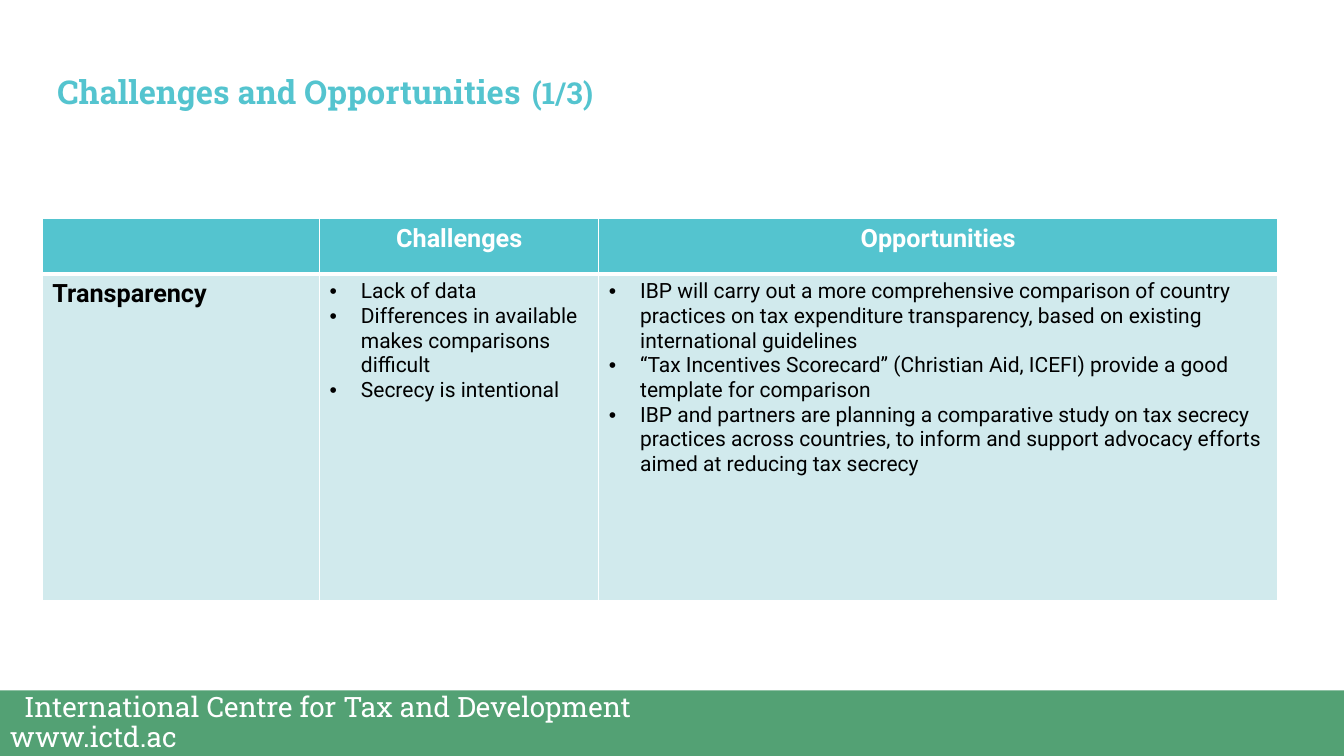
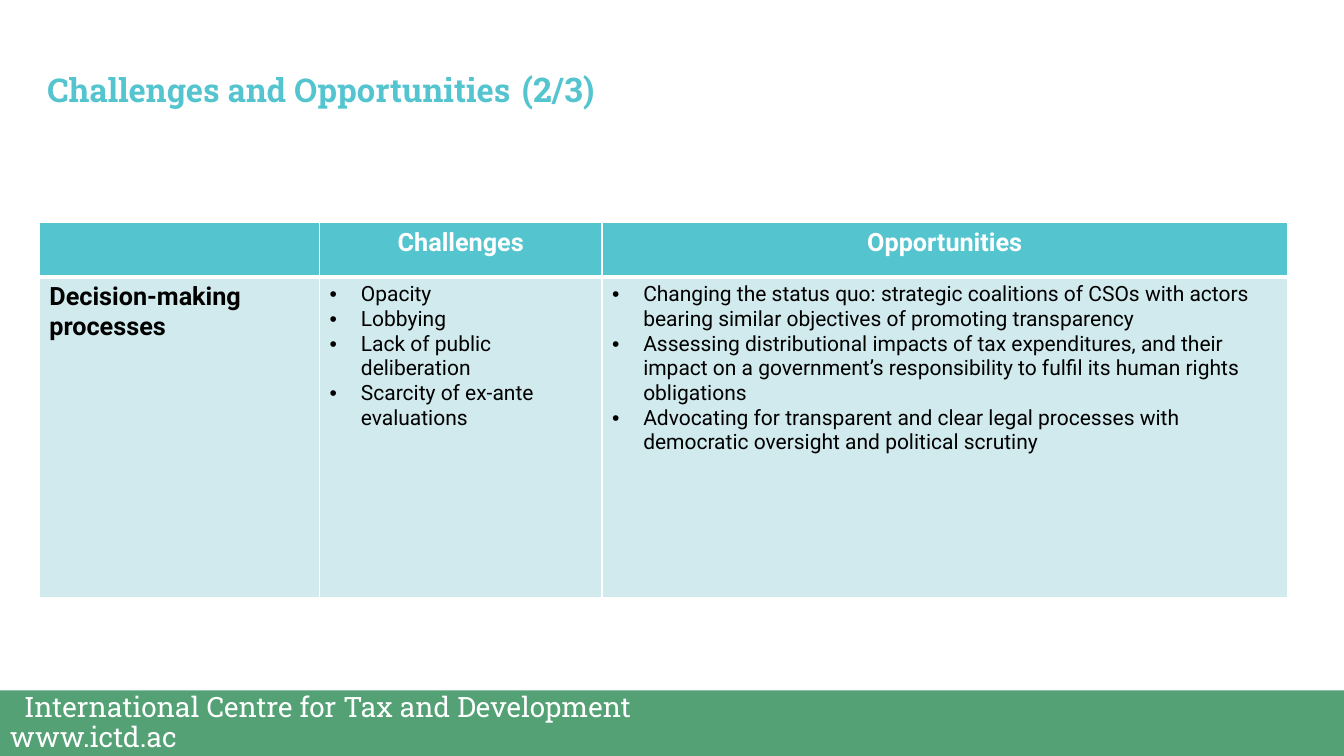
from dataclasses import dataclass

from lxml import etree
from pptx import Presentation
from pptx.dml.color import RGBColor
from pptx.enum.shapes import MSO_SHAPE
from pptx.enum.text import MSO_ANCHOR, MSO_AUTO_SIZE, PP_ALIGN
from pptx.oxml.ns import qn
from pptx.slide import Slide
from pptx.table import _Cell
from pptx.util import Inches, Pt

RECT = MSO_SHAPE.RECTANGLE
TOP, MIDDLE = MSO_ANCHOR.TOP, MSO_ANCHOR.MIDDLE
LEFT, CENTER = PP_ALIGN.LEFT, PP_ALIGN.CENTER
NO_FIT = MSO_AUTO_SIZE.NONE

SLAB, SANS = "Roboto Slab", "Roboto"
TEAL, PALE, GREEN = "54C4CF", "D1EAED", "53A174"
WHITE, BLACK = "FFFFFF", "000000"
WIDTH, HEIGHT, BAND = 13.33, 7.5, 0.65
HANG = 0.31
HEADS = ("", "Challenges", "Opportunities")


@dataclass
class Page:
    title_at: tuple[float, float]
    count: str
    count_size: float
    table_at: tuple[float, float]
    cols: tuple[float, ...]
    rows: tuple[float, ...]
    topic: str
    issues: tuple[str, ...]
    chances: tuple[str, ...]


PAGES = (
    Page(
        (0.47, 0.54), "(1/3)", 21.6,
        (0.42, 2.17), (2.75, 2.77, 6.73), (0.55, 3.24),
        "Transparency",
        (
            "Lack of data",
            "Differences in available makes comparisons difficult",
            "Secrecy is intentional",
        ),
        (
            "IBP will carry out a more comprehensive comparison of country practices on "
            "tax expenditure transparency, based on existing international guidelines",
            "“Tax Incentives Scorecard” (Christian Aid, ICEFI) provide a good template "
            "for comparison",
            "IBP and partners are planning a comparative study on tax secrecy practices "
            "across countries, to inform and support advocacy efforts aimed at reducing "
            "tax secrecy",
        ),
    ),
    Page(
        (0.37, 0.52), "(2/3)", 24.3,
        (0.39, 2.21), (2.78, 2.8, 6.8), (0.54, 3.18),
        "Decision-making processes",
        (
            "Opacity",
            "Lobbying",
            "Lack of public deliberation",
            "Scarcity of ex-ante evaluations",
        ),
        (
            "Changing the status quo: strategic coalitions of CSOs with actors bearing "
            "similar objectives of promoting transparency",
            "Assessing distributional impacts of tax expenditures, and their impact on a "
            "government’s responsibility to fulfil its human rights obligations",
            "Advocating for transparent and clear legal processes with democratic "
            "oversight and political scrutiny",
        ),
    ),
)


def paint(target, color: str) -> None:
    """Give a fill or a font a solid colour."""
    if hasattr(target, "solid"):
        target.solid()
        target.fore_color.rgb = RGBColor.from_string(color)
    else:
        target.color.rgb = RGBColor.from_string(color)


def style(para, face: str, color: str, size: float | None = None, bold: bool = False) -> None:
    font = para.font
    font.name, font.bold = face, bold
    if size:
        font.size = Pt(size)
    paint(font, color)


def add_band(slide: Slide) -> None:
    band = slide.shapes.add_shape(
        RECT, 0, Inches(HEIGHT - BAND), Inches(WIDTH), Inches(BAND))
    band.shadow.inherit = False
    paint(band.fill, GREEN)
    band.line.fill.background()
    frame = band.text_frame
    frame.vertical_anchor = MIDDLE
    frame.text = "International Centre for Tax and Development\nwww.ictd.ac"
    for para in frame.paragraphs:
        para.alignment, para.line_spacing = LEFT, 0.9
        style(para, SLAB, WHITE, 20)
    frame.paragraphs[0]._p.get_or_add_pPr().set("indent", str(Inches(0.14)))


def add_title(slide: Slide, page: Page) -> None:
    title = slide.shapes.title
    title.left, title.top = map(Inches, page.title_at)
    title.width, title.height = Inches(10.02), Inches(0.74)
    frame = title.text_frame
    frame.auto_size, frame.vertical_anchor = NO_FIT, TOP
    para = frame.paragraphs[0]
    para.alignment = LEFT
    style(para, SLAB, TEAL, bold=True)
    parts = (("Challenges and Opportunities", 23.4), (" ", 32.4), (page.count, page.count_size))
    for text, size in parts:
        run = para.add_run()
        run.text = text
        run.font.size = Pt(size)


def add_edges(cell: _Cell, top: float, bottom: float) -> None:
    props = cell._tc.get_or_add_tcPr()
    for side, width in (("L", 1), ("R", 1), ("T", top), ("B", bottom)):
        line = etree.SubElement(props, qn(f"a:ln{side}"), w=str(Pt(width)))
        fill = etree.SubElement(line, qn("a:solidFill"))
        etree.SubElement(fill, qn("a:srgbClr"), val=WHITE)


def add_bullet(para) -> None:
    props = para._p.get_or_add_pPr()
    props.set("marL", str(Inches(HANG)))
    props.set("indent", str(Inches(-HANG)))
    etree.SubElement(props, qn("a:buFont"), typeface="Arial")
    etree.SubElement(props, qn("a:buChar"), char="•")


def add_grid(slide: Slide, page: Page) -> None:
    left, top = page.table_at
    table = slide.shapes.add_table(
        len(page.rows), len(page.cols), Inches(left), Inches(top),
        Inches(sum(page.cols)), Inches(sum(page.rows))).table
    table.horz_banding = False
    for col, width in zip(table.columns, page.cols):
        col.width = Inches(width)
    for row, height in zip(table.rows, page.rows):
        row.height = Inches(height)

    # Header row
    for cell, head in zip(table.rows[0].cells, HEADS):
        add_edges(cell, 1, 3)
        paint(cell.fill, TEAL)
        cell.text = head
        para = cell.text_frame.paragraphs[0]
        para.alignment = CENTER
        style(para, SANS, WHITE, 18, True)

    # Topic and its bullet lists
    body = ((page.topic,), page.issues, page.chances)
    for spot, (cell, lines) in enumerate(zip(table.rows[1].cells, body)):
        add_edges(cell, 3, 1)
        paint(cell.fill, PALE)
        cell.text = "\n".join(lines)
        for para in cell.text_frame.paragraphs:
            if spot:
                add_bullet(para)
                style(para, SANS, BLACK, 15)
            else:
                style(para, SANS, BLACK, 18, True)


def main() -> None:
    deck = Presentation()
    deck.slide_width, deck.slide_height = Inches(WIDTH), Inches(HEIGHT)
    for page in PAGES:
        slide = deck.slides.add_slide(deck.slide_layouts[5])
        add_band(slide)
        add_title(slide, page)
        add_grid(slide, page)
    deck.save("out.pptx")


if __name__ == "__main__":
    main()
